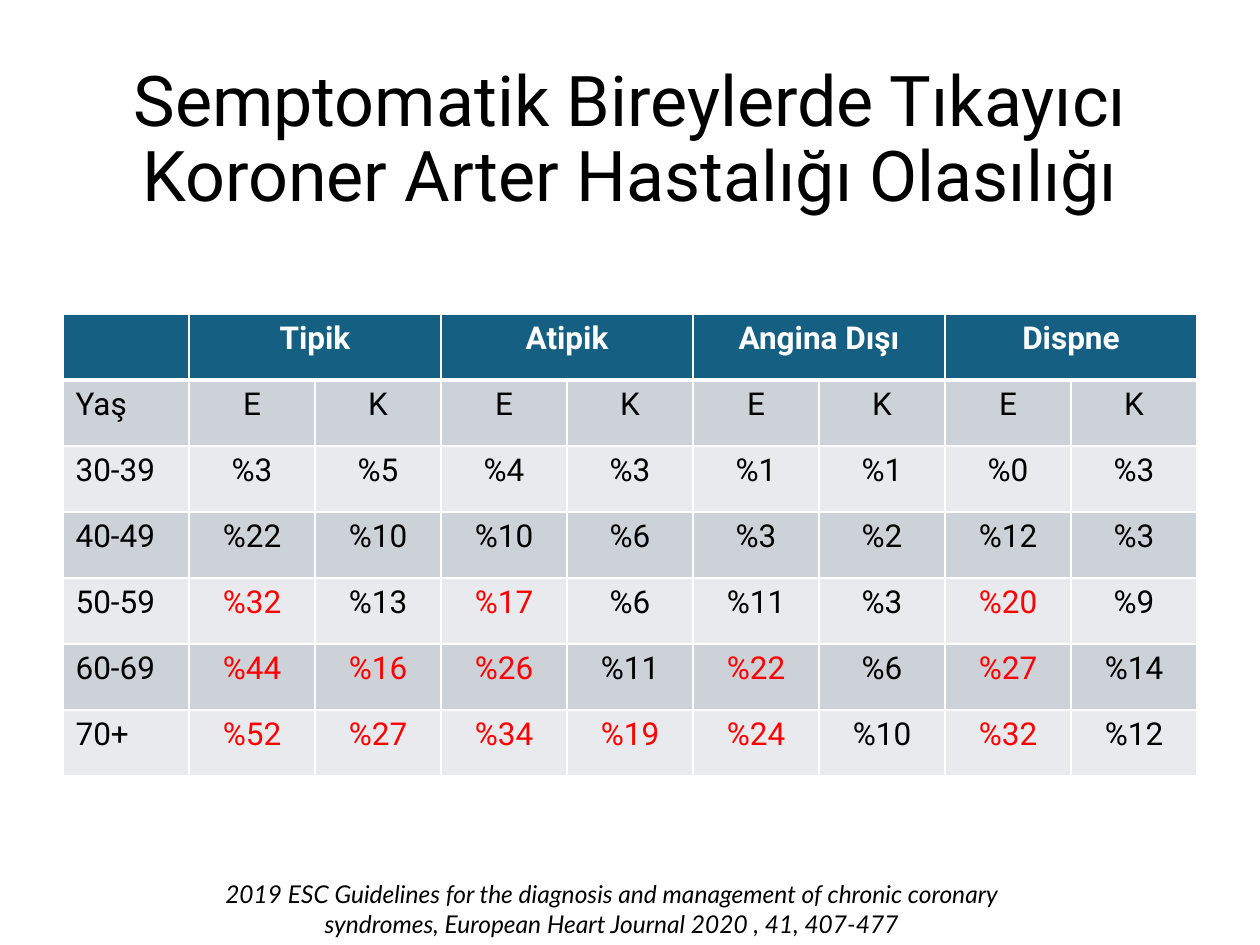
"""Build a slide with a table of coronary artery disease probabilities."""
from lxml import etree
from pptx import Presentation
from pptx.dml.color import RGBColor
from pptx.enum.text import MSO_ANCHOR, PP_ALIGN
from pptx.oxml.ns import qn
from pptx.util import Emu, Pt

CENTER, LEFT = PP_ALIGN.CENTER, PP_ALIGN.LEFT
TOP, MIDDLE = MSO_ANCHOR.TOP, MSO_ANCHOR.MIDDLE

TITLE = "Semptomatik Bireylerde Tıkayıcı Koroner Arter Hastalığı Olasılığı"
SOURCE = ("2019 ESC Guidelines for the diagnosis and management of chronic "
          "coronary syndromes, European Heart Journal 2020 , 41, 407-477")
SYMPTOMS = ["Tipik", "Atipik", "Angina Dışı", "Dispne"]
SEXES = ["E", "K"]
RATES = {
    "30-39": [3, 5, 4, 3, 1, 1, 0, 3],
    "40-49": [22, 10, 10, 6, 3, 2, 12, 3],
    "50-59": [32, 13, 17, 6, 11, 3, 20, 9],
    "60-69": [44, 16, 26, 11, 22, 6, 27, 14],
    "70+": [52, 27, 34, 19, 24, 10, 32, 12],
}
HIGH_RATE = 15
NOT_HIGH = {("40-49", 22)}
COLORS = {"black": "000000", "white": "FFFFFF", "red": "FF0000",
          "header": "156082", "dark": "CCD2D8", "light": "E8EAED"}
PX = 914400 / 126
COL_W, ROW_H = 126, 66


def px(n):
    """Turn pixels into EMU."""
    return Emu(round(n * PX))


def rgb(name):
    """Look up a named colour."""
    return RGBColor.from_string(COLORS[name])


def write(tf, text, size=18, font="Roboto", color="black", bold=False,
          italic=False, align=CENTER, spacing=None):
    """Put one formatted paragraph into a text frame."""
    p = tf.paragraphs[0]
    p.alignment, p.line_spacing = align, spacing
    r = p.add_run()
    r.text = text
    f = r.font
    f.size, f.name, f.bold, f.italic = Pt(size), font, bold, italic
    f.color.rgb = rgb(color)


def add_text(slide, box, text, anchor=TOP, **fmt):
    """Add a wrapped text box."""
    tf = slide.shapes.add_textbox(*map(px, box)).text_frame
    tf.word_wrap, tf.vertical_anchor = True, anchor
    write(tf, text, **fmt)


def style_cell(cell, fill, top=1, bottom=1):
    """Give a cell white borders and a solid fill."""
    tcPr = cell._tc.get_or_add_tcPr()
    for side, width in (("L", 1), ("R", 1), ("T", top), ("B", bottom)):
        ln = etree.SubElement(tcPr, qn(f"a:ln{side}"), w=str(Pt(width)))
        solid = etree.SubElement(ln, qn("a:solidFill"))
        etree.SubElement(solid, qn("a:srgbClr"), val=COLORS["white"])
    cell.fill.solid()
    cell.fill.fore_color.rgb = rgb(fill)


def add_rates(slide, left, top):
    """Add the table of rates by age, symptom and sex."""
    n_rows, n_cols = len(RATES) + 2, len(SYMPTOMS) * len(SEXES) + 1
    table = slide.shapes.add_table(n_rows, n_cols, px(left), px(top),
                                   px(n_cols * COL_W), px(n_rows * ROW_H)).table
    for col in table.columns:
        col.width = px(COL_W)
    for row in table.rows:
        row.height = px(ROW_H)

    for c in range(n_cols):
        style_cell(table.cell(0, c), "header", bottom=3)
    for i, symptom in enumerate(SYMPTOMS):
        c = 1 + i * len(SEXES)
        cell = table.cell(0, c)
        cell.merge(table.cell(0, c + len(SEXES) - 1))
        write(cell.text_frame, symptom, color="white", bold=True)

    body = [[("Yaş", "black")] + [(s, "black") for s in SEXES * len(SYMPTOMS)]]
    for age, rates in RATES.items():
        body.append([(age, "black")] + [
            (f"%{v}", "red" if v > HIGH_RATE and (age, v) not in NOT_HIGH else "black")
            for v in rates])
    for r, row in enumerate(body, start=1):
        for c, (text, color) in enumerate(row):
            cell = table.cell(r, c)
            style_cell(cell, "dark" if r % 2 else "light", top=3 if r == 1 else 1)
            write(cell.text_frame, text, color=color, align=CENTER if c else LEFT)


def main():
    """Create and save the presentation."""
    prs = Presentation()
    prs.slide_width, prs.slide_height = px(1260), px(945)
    slide = prs.slides.add_slide(prs.slide_layouts[6])
    add_text(slide, (87, 50, 1086, 183), TITLE, anchor=MIDDLE, size=40, spacing=0.9)
    add_rates(slide, 63, 314)
    add_text(slide, (164, 873, 896, 72), SOURCE, size=14, font="Lato", italic=True)
    prs.save("out.pptx")


if __name__ == "__main__":
    main()
